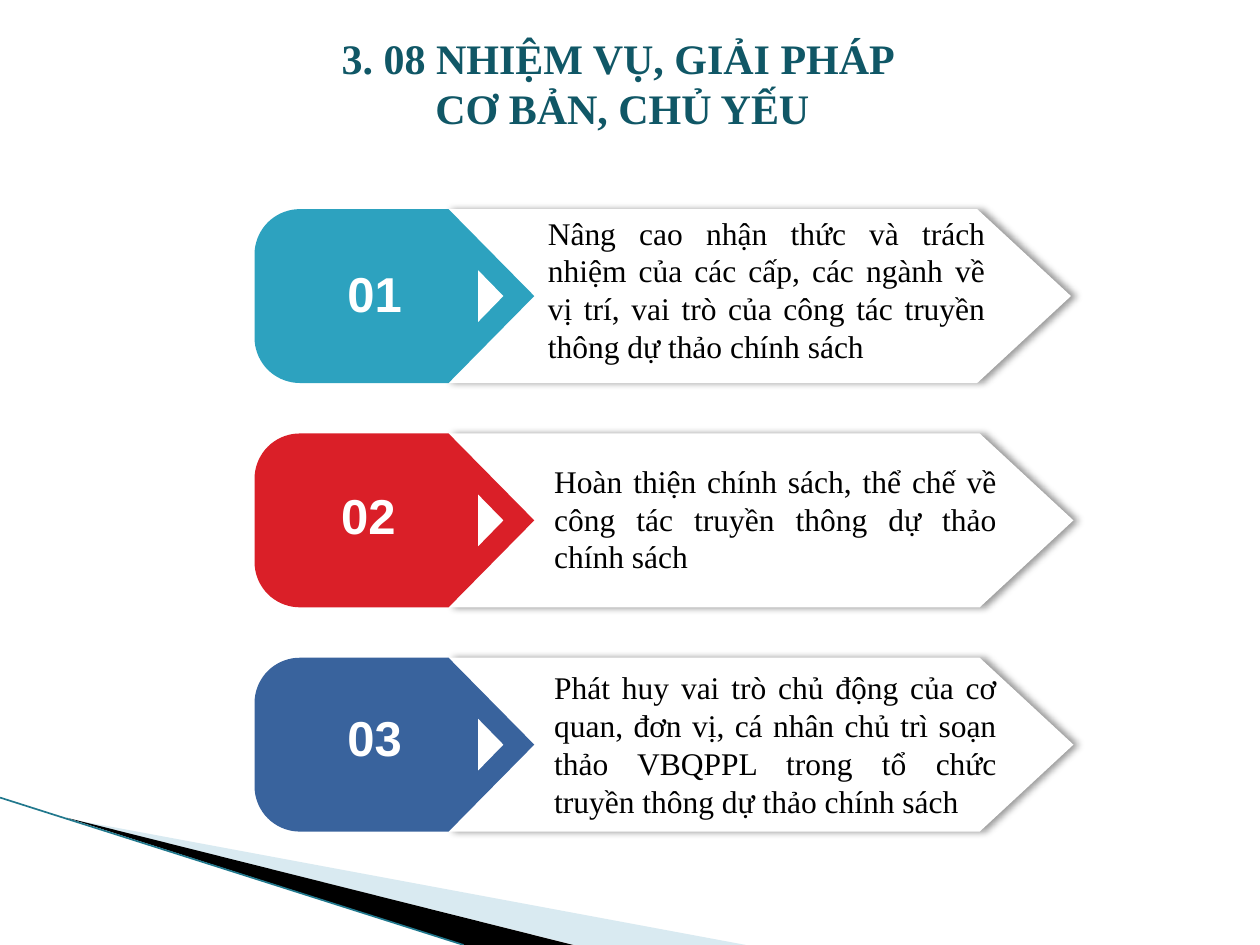
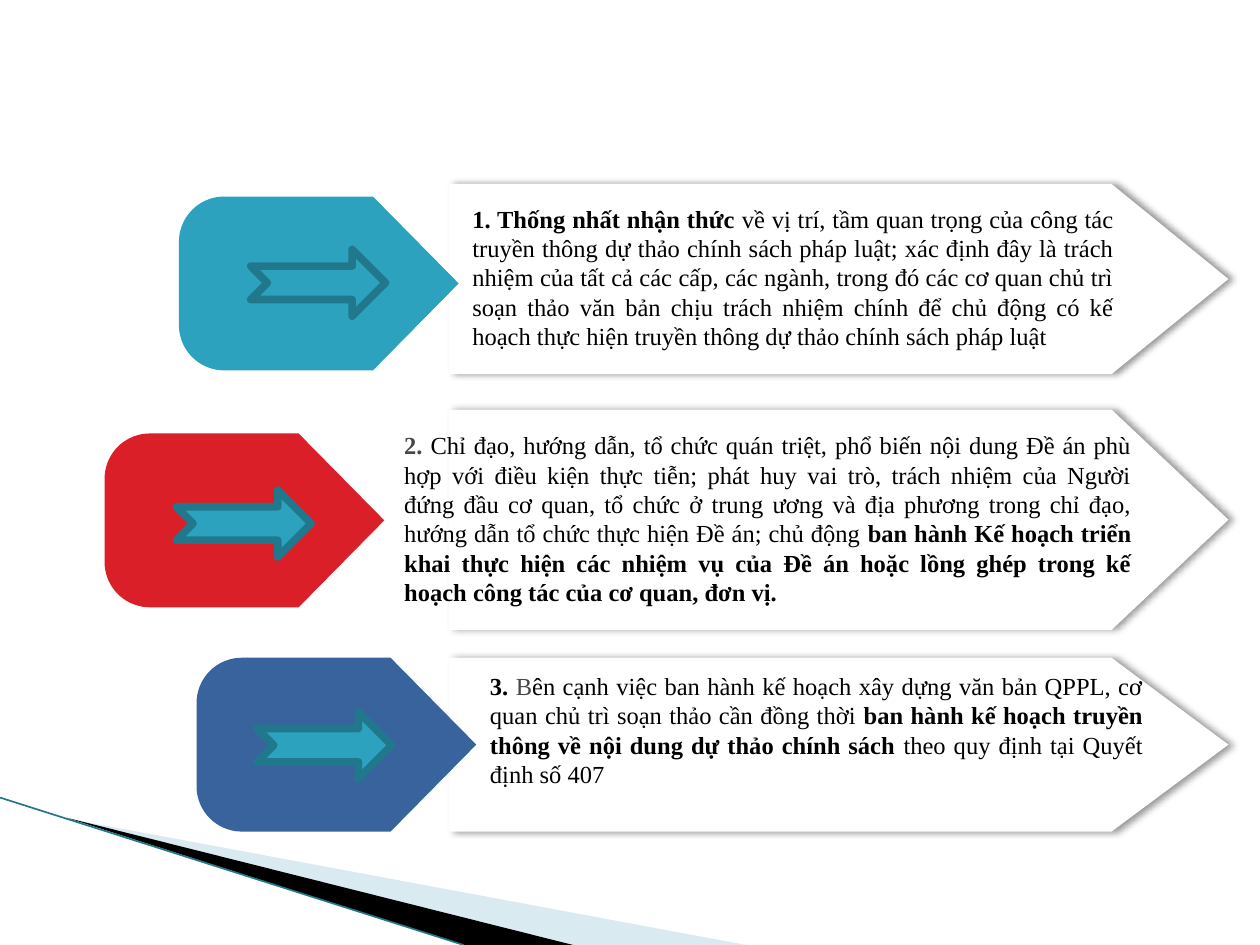
import math
import pptx
import pptx.util
import pptx.dml.color
import pptx.enum.shapes
import pptx.enum.text
import pptx.oxml
import pptx.oxml.ns

RGB = pptx.dml.color.RGBColor
MSO = pptx.enum.shapes.MSO_SHAPE
ALIGN = pptx.enum.text.PP_ALIGN
Pt = pptx.util.Pt
Inches = pptx.util.Inches

# Colours and fonts
TEAL, RED, BLUE = RGB(0x2D, 0xA2, 0xBF), RGB(0xDA, 0x1F, 0x28), RGB(0x39, 0x63, 0x9D)
TITLE, DARK_TEAL, PALE = RGB(0x10, 0x57, 0x66), RGB(0x21, 0x78, 0x8D), RGB(0xA0, 0xCB, 0xDC)
WHITE, BLACK, GREY = RGB(255, 255, 255), RGB(0, 0, 0), RGB(0x4A, 0x46, 0x44)
ROW_COLOURS = [TEAL, RED, BLUE]
SERIF, SANS = "Times New Roman", "Arial"

# Content: a run is (text, bold, colour)
HEADING = ["3. 08 NHIỆM VỤ, GIẢI PHÁP ", "CƠ BẢN, CHỦ YẾU"]

# number, number left, arrow left, text box, text
TASKS = [
    ("01", 2.66, 3.54, (4.25, 1.64, 3.67, 1.31),
     "Nâng cao nhận thức và trách nhiệm của các cấp, các ngành về vị trí, "
     "vai trò của công tác truyền thông dự thảo chính sách"),
    ("02", 2.61, 3.56, (4.3, 3.61, 3.71, 1.01),
     "Hoàn thiện chính sách, thể chế về công tác truyền thông dự thảo chính sách"),
    ("03", 2.66, 3.56, (4.3, 5.25, 3.71, 1.31),
     "Phát huy vai trò chủ động của cơ quan, đơn vị, cá nhân chủ trì soạn thảo "
     "VBQPPL trong tổ chức truyền thông dự thảo chính sách"),
]

# badge (left, top), small arrow (left, top), big arrow (top, height), text box, runs
DETAILS = [
    ((1.42, 1.56), (1.99, 1.98), (1.46, 1.51), (3.65, 1.56, 5.29, 1.28), [
        ("1. Thống nhất nhận thức ", True, BLACK),
        ("về vị trí, tầm quan trọng của công tác truyền thông dự thảo chính sách pháp luật; "
         "xác định đây là trách nhiệm của tất cả các cấp, các ngành, trong đó các cơ quan chủ trì "
         "soạn thảo văn bản chịu trách nhiệm chính để chủ động có kế hoạch thực hiện truyền thông "
         "dự thảo chính sách pháp luật", False, BLACK)]),
    ((0.83, 3.44), (1.4, 3.89), (3.25, 1.75), (3.11, 3.36, 5.97, 1.51), [
        ("2. ", True, GREY),
        ("Chỉ đạo, hướng dẫn, tổ chức quán triệt, phổ biến nội dung Đề án phù hợp với điều kiện "
         "thực tiễn; phát huy vai trò, trách nhiệm của Người đứng đầu cơ quan, tổ chức ở trung ương "
         "và địa phương trong chỉ đạo, hướng dẫn tổ chức thực hiện Đề án; chủ động ", False, BLACK),
        ("ban hành Kế hoạch triển khai thực hiện các nhiệm vụ của Đề án hoặc lồng ghép trong "
         "kế hoạch công tác của cơ quan, đơn vị.", True, BLACK)]),
    ((1.56, 5.22), (2.04, 5.65), (5.22, 1.38), (3.79, 5.27, 5.38, 1.04), [
        ("3. ", True, BLACK),
        ("B", False, GREY),
        ("ên cạnh việc ban hành kế hoạch xây dựng văn bản QPPL, cơ quan chủ trì soạn thảo "
         "cần đồng thời ", False, BLACK),
        ("ban hành kế hoạch truyền thông về nội dung dự thảo chính sách ", True, BLACK),
        ("theo quy định tại Quyết định số 407", False, BLACK)]),
]

# Layout, in inches
WIDTH, HEIGHT = 10, 7.5
ROW_TOP, ROW_PITCH, ROW_H = 1.66, 1.78, 1.38
BADGE_W, BADGE_SHOULDER, BADGE_RADIUS = 2.22, 1.54, 0.36
ARROW_SHOULDER = 0.85  # share of the arrow's width


def polygon(s, points, colour):
    pts = [(Inches(x), Inches(y)) for x, y in points]
    fb = s.shapes.build_freeform(*pts[0], scale=1.0)
    fb.add_line_segments(pts[1:], close=True)
    sp = fb.convert_to_shape()
    sp.shadow.inherit = False
    sp.fill.solid()
    sp.fill.fore_color.rgb = colour
    sp.line.fill.background()
    return sp


def preset(s, kind, box, colour):
    sp = s.shapes.add_shape(kind, *map(Inches, box))
    sp.shadow.inherit = False
    sp.fill.solid()
    sp.fill.fore_color.rgb = colour
    sp.line.fill.background()
    return sp


def text(s, box, paragraphs, size, font=SERIF, align=ALIGN.JUSTIFY, wrap=True):
    tf = s.shapes.add_textbox(*map(Inches, box)).text_frame
    tf.word_wrap = wrap
    tf.vertical_anchor = pptx.enum.text.MSO_ANCHOR.MIDDLE
    for i, runs in enumerate(paragraphs):
        p = tf.add_paragraph() if i else tf.paragraphs[0]
        p.alignment = align
        for words, bold, colour in runs:
            r = p.add_run()
            r.text = words
            r.font.name, r.font.size, r.font.bold = font, Pt(size), bold
            r.font.color.rgb = colour


def big_arrow(s, left, top, w, h):
    """White arrow with a soft shadow to its right."""
    shoulder, right = left + ARROW_SHOULDER * w, left + w
    sp = polygon(s, [(left, top), (shoulder, top), (right, top + h / 2),
                     (shoulder, top + h), (left, top + h)], WHITE)
    effects = sp.element.spPr.find(pptx.oxml.ns.qn("a:effectLst"))
    effects.append(pptx.oxml.parse_xml(
        f'<a:outerShdw {pptx.oxml.ns.nsdecls("a")} blurRad="{Pt(4)}" dist="{Pt(3)}" dir="0" '
        'algn="l" rotWithShape="0"><a:srgbClr val="000000"><a:alpha val="40000"/>'
        '</a:srgbClr></a:outerShdw>'))


def badge(s, left, top, colour):
    """Pentagon pointing right, with rounded left corners."""
    rad, bottom = BADGE_RADIUS, top + ROW_H
    points = [(left + BADGE_SHOULDER, top), (left + BADGE_W, top + ROW_H / 2),
              (left + BADGE_SHOULDER, bottom)]
    for cy, start in ((bottom - rad, 90), (top + rad, 180)):
        for deg in range(start, start + 91, 5):
            a = math.radians(deg)
            points.append((left + rad + rad * math.cos(a), cy + rad * math.sin(a)))
    polygon(s, points, colour)


def new_slide(prs):
    """Blank slide with the shared wedges in the lower left corner."""
    s = prs.slides.add_slide(prs.slide_layouts[6])
    pale = polygon(s, [(0.55, 6.5), (5.92, HEIGHT), (4.56, HEIGHT)], PALE)
    clr = pale.element.spPr.find(".//" + pptx.oxml.ns.qn("a:srgbClr"))
    clr.append(pptx.oxml.parse_xml(f'<a:alpha {pptx.oxml.ns.nsdecls("a")} val="40000"/>'))
    polygon(s, [(0.53, 6.49), (4.55, HEIGHT), (3.68, HEIGHT)], BLACK)
    line = s.shapes.add_connector(pptx.enum.shapes.MSO_CONNECTOR.STRAIGHT,
                                  0, Inches(6.33), Inches(3.68), Inches(HEIGHT))
    line.line.color.rgb = DARK_TEAL
    line.line.width = Pt(0.95)
    line.element.spPr.append(pptx.oxml.parse_xml(
        f'<a:effectLst {pptx.oxml.ns.nsdecls("a")}/>'))
    return s


def tasks_slide(prs):
    s = new_slide(prs)
    text(s, (2.59, 0.2, 4.7, 0.91), [[(words, True, TITLE)] for words in HEADING],
         24, align=ALIGN.CENTER, wrap=False)
    for i, (number, number_left, arrow_left, box, words) in enumerate(TASKS):
        top = ROW_TOP + i * ROW_PITCH
        big_arrow(s, arrow_left, top, 4.96, ROW_H)
        badge(s, 2.02, top, ROW_COLOURS[i])
        preset(s, MSO.ISOSCELES_TRIANGLE,
               (3.69, top + ROW_H / 2 - 0.1, 0.41, 0.2), WHITE).rotation = 90
        text(s, (number_left, 2.04 + i * 1.76, 0.64, 0.57), [[(number, True, WHITE)]],
             28, SANS, ALIGN.LEFT, wrap=False)
        text(s, box, [[(words, False, BLACK)]], 18)


def details_slide(prs):
    s = new_slide(prs)
    for colour, (badge_at, small_at, (top, h), box, runs) in zip(ROW_COLOURS, DETAILS):
        big_arrow(s, 3.56, top, 6.19, h)
        badge(s, *badge_at, colour)
        text(s, box, [runs], 14)
        small = preset(s, MSO.NOTCHED_RIGHT_ARROW, (*small_at, 1.07, 0.53), TEAL)
        small.line.color.rgb = DARK_TEAL
        small.line.width = Pt(4.33)


def main():
    prs = pptx.Presentation()
    prs.slide_width, prs.slide_height = Inches(WIDTH), Inches(HEIGHT)
    tasks_slide(prs)
    details_slide(prs)
    prs.save("out.pptx")


if __name__ == "__main__":
    main()
